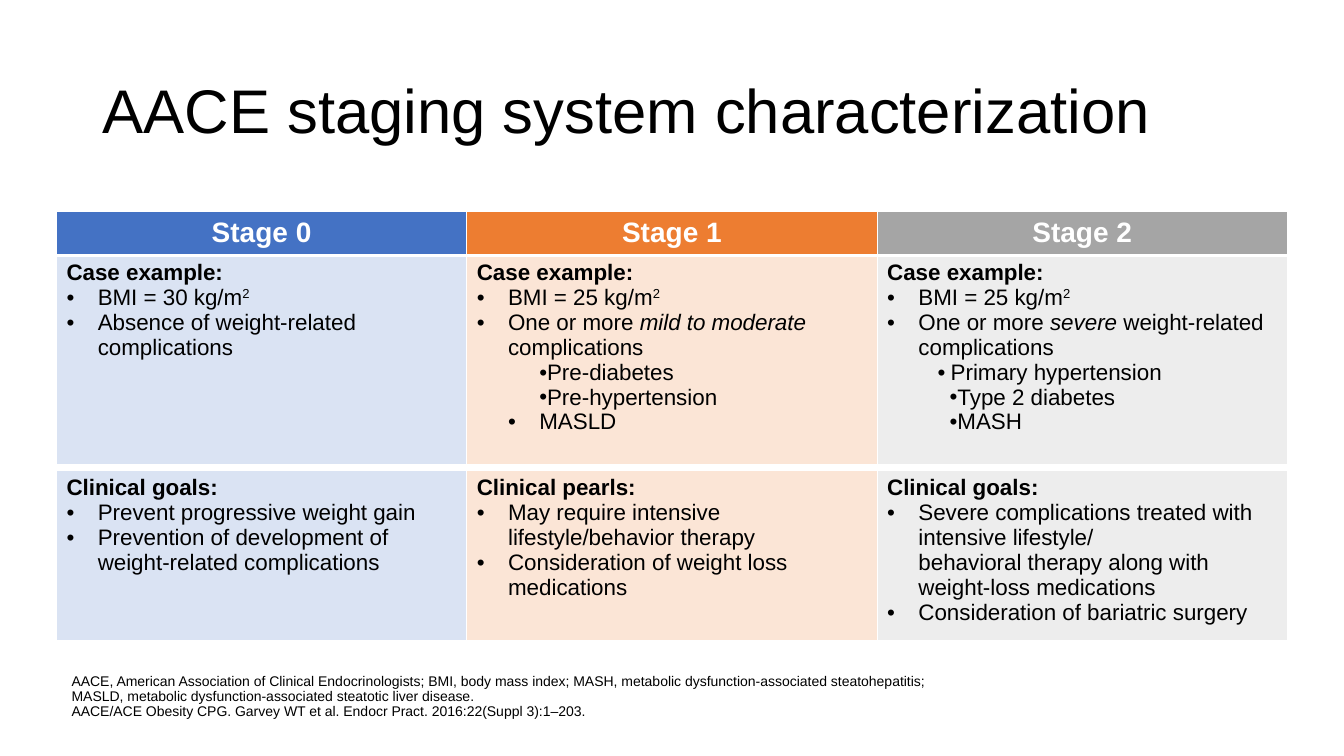
import pptx
import pptx.dml.color
import pptx.enum.text
import pptx.oxml.ns
import pptx.util
from lxml import etree

Inches, Pt = pptx.util.Inches, pptx.util.Pt
RGBColor = pptx.dml.color.RGBColor
ALIGN = pptx.enum.text.PP_ALIGN
ANCHOR = pptx.enum.text.MSO_ANCHOR

BLACK = RGBColor(0x00, 0x00, 0x00)
WHITE = RGBColor(0xFF, 0xFF, 0xFF)
HEADER_FILLS = [RGBColor(0x44, 0x72, 0xC4), RGBColor(0xED, 0x7D, 0x31), RGBColor(0xA5, 0xA5, 0xA5)]
BODY_FILLS = [RGBColor(0xDA, 0xE3, 0xF3), RGBColor(0xFB, 0xE5, 0xD6), RGBColor(0xED, 0xED, 0xED)]

TITLE = "AACE staging system characterization"
FOOTNOTE = (
    "AACE, American Association of Clinical Endocrinologists; BMI, body mass index; "
    "MASH, metabolic dysfunction-associated steatohepatitis; \n"
    "MASLD, metabolic dysfunction-associated steatotic liver disease.\n"
    "AACE/ACE Obesity CPG. Garvey WT et al. Endocr Pract. 2016:22(Suppl 3):1–203."
)

# Paragraph levels: left margin and first-line indent, in inches
INDENTS = {
    "bullet": (0.31, -0.31),
    "inner": (0.31, 0.31),
    "hanging": (0.62, -0.31),
    "tight": (0.63, -0.13),
}
FORMATS = {"heading": {"bold": True}, "italic": {"italic": True}, "plain": {}, "super": {}}

# A cell is a list of (level, spans); a span is (text, format name)
STAGES = [[("center", [(f"Stage {number}", "heading")])] for number in range(3)]


def heading(text):
    return ("heading", [(text, "heading")])


def item(text, level="bullet"):
    return (level, [(text, "plain")])


def bmi(value):
    return ("bullet", [(f"BMI = {value} kg/m", "plain"), ("2", "super")])


CASES = [
    [heading("Case example:"), bmi(30), item("Absence of weight-related complications")],
    [
        heading("Case example:"),
        bmi(25),
        ("bullet", [("One or more ", "plain"), ("mild to moderate ", "italic"),
                    ("complications", "plain")]),
        item("Pre-diabetes", "inner"),
        item("Pre-hypertension", "inner"),
        item("MASLD", "hanging"),
    ],
    [
        heading("Case example:"),
        bmi(25),
        ("bullet", [("One or more ", "plain"), ("severe", "italic"),
                    (" weight-related complications", "plain")]),
        item("Primary hypertension", "tight"),
        item("Type 2 diabetes", "inner"),
        item("MASH", "inner"),
    ],
]
GOALS = [
    [
        heading("Clinical goals:"),
        item("Prevent progressive weight gain"),
        item("Prevention of development of weight-related complications"),
    ],
    [
        heading("Clinical pearls:"),
        item("May require intensive lifestyle/behavior therapy"),
        item("Consideration of weight loss medications"),
    ],
    [
        heading("Clinical goals:"),
        item("Severe complications treated with intensive lifestyle/\n"
             "behavioral therapy along with weight-loss medications"),
        item("Consideration of bariatric surgery"),
    ],
]

# Row: cells, height, fills, text size, text colour, border points (left, right, top, bottom)
HEADER_ROW = (STAGES, 0.41, HEADER_FILLS, 20, WHITE, (1, 1, 1, 3))
CASE_ROW = (CASES, 2.08, BODY_FILLS, 16, BLACK, (1, 1, 3, 1))
GOAL_ROW = (GOALS, 1.7, BODY_FILLS, 16, BLACK, (1, 1, 1, 3))
TABLES = [(2.1, [HEADER_ROW, CASE_ROW]), (4.67, [GOAL_ROW])]
TABLE_LEFT, COLUMN_WIDTH = 0.56, 4.07


def add_spans(para, text, size, color, style="plain"):
    """Add text to a paragraph, turning each newline into a line break."""
    for index, line in enumerate(text.split("\n")):
        if index:
            para.add_line_break()
        span = para.add_run()
        span.text = line
        settings = {"name": "Arial", "size": Pt(size), "bold": False, **FORMATS[style]}
        for name, value in settings.items():
            setattr(span.font, name, value)
        span.font.color.rgb = color
        if style == "super":
            span.font._element.set("baseline", "30000")


def set_bullet(para, level):
    margin, indent = INDENTS[level]
    properties = para._p.get_or_add_pPr()
    properties.set("marL", str(Inches(margin)))
    properties.set("indent", str(Inches(indent)))
    for tag, name, value in [("a:buFont", "typeface", "Arial"), ("a:buChar", "char", "•")]:
        etree.SubElement(properties, pptx.oxml.ns.qn(tag)).set(name, value)


def set_borders(cell, widths):
    properties = cell._tc.get_or_add_tcPr()
    for position, (side, width) in enumerate(zip("LRTB", widths)):
        line = etree.Element(pptx.oxml.ns.qn(f"a:ln{side}"), w=str(Pt(width)))
        solid = etree.SubElement(line, pptx.oxml.ns.qn("a:solidFill"))
        etree.SubElement(solid, pptx.oxml.ns.qn("a:srgbClr"), val=str(WHITE))
        properties.insert(position, line)


def fill_cell(cell, paragraphs, fill, size, color, borders):
    cell.fill.solid()
    cell.fill.fore_color.rgb = fill
    set_borders(cell, borders)
    for index, (level, spans) in enumerate(paragraphs):
        para = cell.text_frame.add_paragraph() if index else cell.text_frame.paragraphs[0]
        if level == "center":
            para.alignment = ALIGN.CENTER
        elif level in INDENTS:
            set_bullet(para, level)
        for text, style in spans:
            add_spans(para, text, size, color, style)


def add_stage_table(page, top, rows):
    columns = len(STAGES)
    height = sum(row[1] for row in rows)
    table = page.shapes.add_table(len(rows), columns, Inches(TABLE_LEFT), Inches(top),
                                  Inches(COLUMN_WIDTH * columns), Inches(height)).table
    table.horz_banding = False
    for column in table.columns:
        column.width = Inches(COLUMN_WIDTH)
    for row_index, (cells, row_height, fills, size, color, borders) in enumerate(rows):
        table.rows[row_index].height = Inches(row_height)
        for column_index, (paragraphs, fill) in enumerate(zip(cells, fills)):
            fill_cell(table.cell(row_index, column_index), paragraphs, fill, size, color, borders)


def add_text(page, place, text, size, frame_format):
    box = page.shapes.add_textbox(*map(Inches, place))
    for name, value in {"word_wrap": True, **frame_format}.items():
        setattr(box.text_frame, name, value)
    para = box.text_frame.paragraphs[0]
    para.line_spacing = 0.9
    add_spans(para, text, size, BLACK)


def main():
    deck = pptx.Presentation()
    deck.slide_width, deck.slide_height = Inches(13.33), Inches(7.5)
    page = deck.slides.add_slide(deck.slide_layouts[6])
    add_text(page, (0.92, 0.4, 11.5, 1.45), TITLE, 44, {"vertical_anchor": ANCHOR.MIDDLE})
    no_margins = {f"margin_{side}": 0 for side in ("left", "right", "top", "bottom")}
    add_text(page, (0.71, 6.79, 11.71, 0.35), FOOTNOTE, 10,
             {"vertical_anchor": ANCHOR.BOTTOM, **no_margins})
    for top, rows in TABLES:
        add_stage_table(page, top, rows)
    deck.save("out.pptx")


if __name__ == "__main__":
    main()
